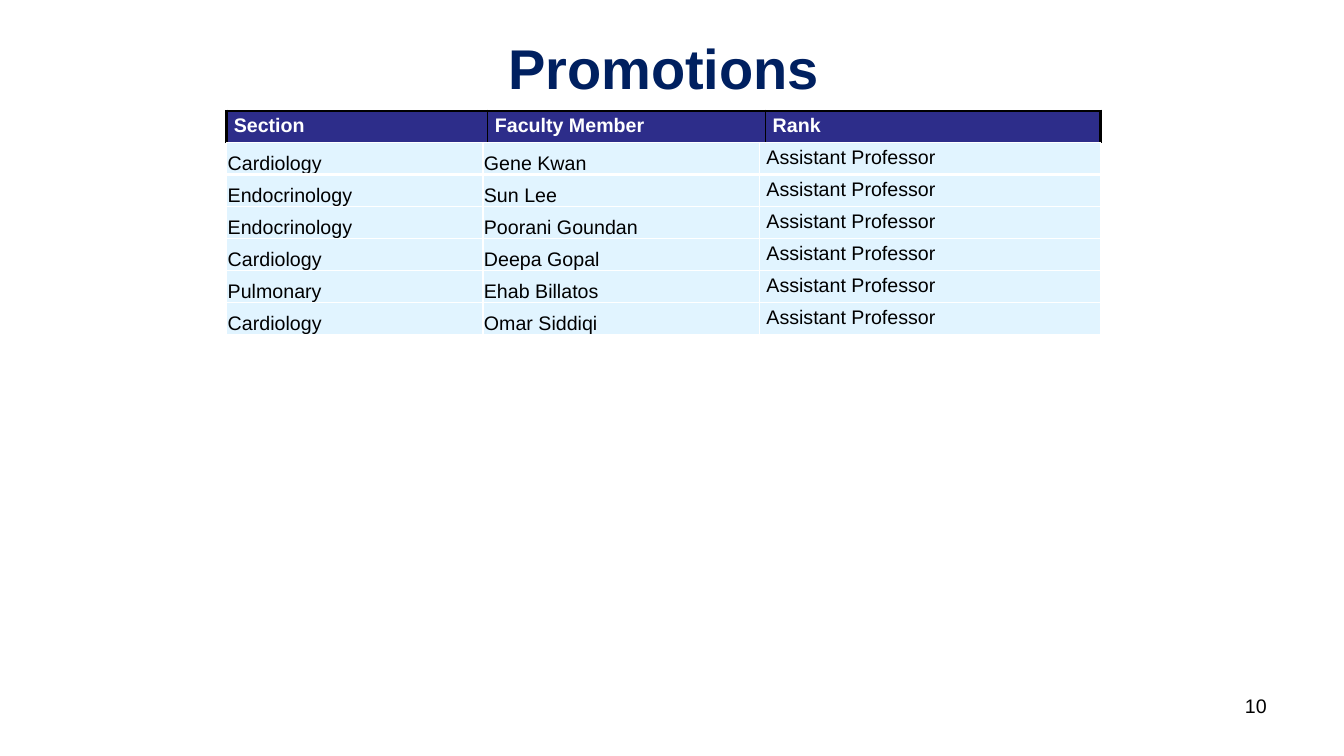
from dataclasses import dataclass

from lxml import etree
from pptx import Presentation
from pptx.dml.color import RGBColor
from pptx.enum.text import MSO_ANCHOR, PP_ALIGN
from pptx.oxml.ns import qn
from pptx.util import Pt

TOP, MID, LOW = MSO_ANCHOR.TOP, MSO_ANCHOR.MIDDLE, MSO_ANCHOR.BOTTOM
LEFT, CENTER, RIGHT = PP_ALIGN.LEFT, PP_ALIGN.CENTER, PP_ALIGN.RIGHT


@dataclass(frozen=True)
class Theme:
    font: str = "Arial"
    navy: str = "002060"
    head: str = "2D2D8A"
    pale: str = "E1F4FF"
    black: str = "000000"
    white: str = "FFFFFF"
    big: int = 40
    body: int = 14


THEME = Theme()

# Cell formats
PAD = dict(margin_left=Pt(5), margin_right=Pt(5), margin_top=Pt(3),
           margin_bottom=Pt(3), vertical_anchor=TOP)
TIGHT = dict(margin_left=Pt(0.7), margin_right=Pt(0.7), margin_top=Pt(0.7),
             margin_bottom=Pt(0), vertical_anchor=LOW)

HEADS = ["Section", "Faculty Member", "Rank"]
STAFF = [
    ("Cardiology", "Gene Kwan"),
    ("Endocrinology", "Sun Lee"),
    ("Endocrinology", "Poorani Goundan"),
    ("Cardiology", "Deepa Gopal"),
    ("Pulmonary", "Ehab Billatos"),
    ("Cardiology", "Omar Siddiqi"),
]
RANK = "Assistant Professor"


def apply(item, form):
    for name, value in form.items():
        setattr(item, name, value)


def write(frame, text, size, color, bold=False, align=LEFT):
    para = frame.paragraphs[0]
    para.alignment = align
    run = para.add_run()
    run.text = text
    apply(run.font, dict(name=THEME.font, size=Pt(size), bold=bold))
    run.font.color.rgb = RGBColor.from_string(color)


def add_text(slide, box, text, size, color, anchor=TOP, **form):
    frame = slide.shapes.add_textbox(*map(Pt, box)).text_frame
    apply(frame, dict(word_wrap=True, vertical_anchor=anchor))
    write(frame, text, size, color, **form)


def add_edges(cell, color, widths):
    """Draw left, right, top and bottom borders, in that order."""
    props = cell._tc.get_or_add_tcPr()
    for side, width in zip("LRTB", widths):
        line = etree.SubElement(props, qn(f"a:ln{side}"), w=str(Pt(width)))
        fill = etree.SubElement(line, qn("a:solidFill"))
        etree.SubElement(fill, qn("a:srgbClr"), val=color)


def add_grid(slide, left, top, cols, high, rows, style):
    """Build a table; style(row, col) gives the pad format and edge widths."""
    fill, ink, edge, bold, rule = style
    table = slide.shapes.add_table(
        len(rows), len(cols), Pt(left), Pt(top),
        Pt(sum(cols)), Pt(high * len(rows))).table
    apply(table, dict(first_row=False, horz_banding=False))
    for col, width in zip(table.columns, cols):
        col.width = Pt(width)
    for r, texts in enumerate(rows):
        table.rows[r].height = Pt(high)
        for c, text in enumerate(texts):
            cell = table.cell(r, c)
            form, widths = rule(r, c)
            apply(cell, form)
            add_edges(cell, edge, widths)
            cell.fill.solid()
            cell.fill.fore_color.rgb = RGBColor.from_string(fill)
            write(cell.text_frame, text, THEME.body, ink, bold)


def head_rule(row, col):
    last = len(HEADS) - 1
    return PAD, (2.25 if col == 0 else 1, 2.25 if col == last else 1, 2.25, 1)


def staff_rule(row, col):
    return PAD if col == 2 else TIGHT, (1, 1, 1, 3 if row == 0 else 1)


def main():
    deck = Presentation()
    apply(deck, dict(slide_width=Pt(960), slide_height=Pt(540)))
    slide = deck.slides.add_slide(deck.slide_layouts[6])

    # Title
    add_text(slide, (180, 18, 588, 60), "Promotions", THEME.big, THEME.navy,
             MID, bold=True, align=CENTER)

    # Heading row
    add_grid(slide, 162, 79.2, (186.5, 198.5, 239), 22.5, [HEADS],
             (THEME.head, THEME.white, THEME.black, True, head_rule))

    # Faculty rows
    add_grid(slide, 162, 101.7, (183, 197.5, 243.5), 22.9,
             [(*pair, RANK) for pair in STAFF],
             (THEME.pale, THEME.black, THEME.white, False, staff_rule))

    # Page number
    add_text(slide, (688, 492, 224, 37.5), "10", THEME.body, THEME.black,
             align=RIGHT)

    deck.save("out.pptx")


if __name__ == "__main__":
    main()
